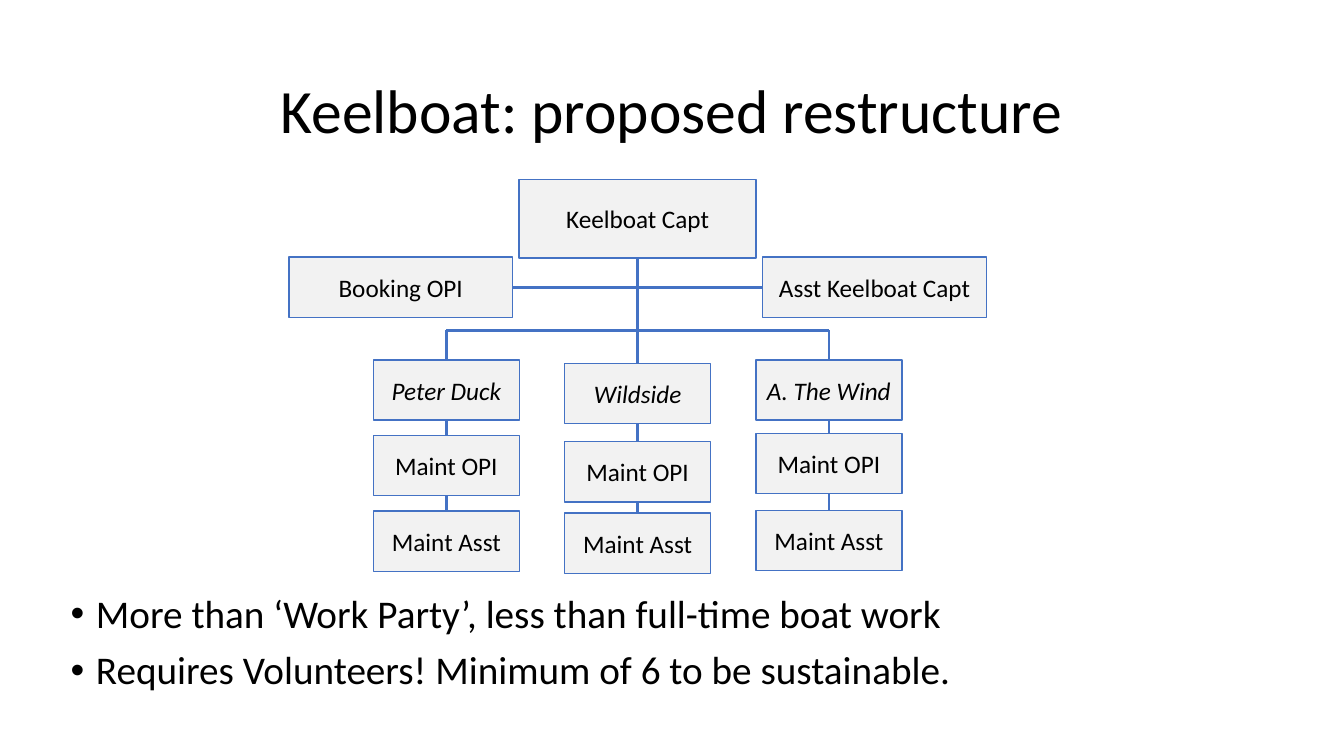
import pptx
import pptx.util
import pptx.dml.color
import pptx.enum.shapes
import pptx.enum.text
from lxml import etree
from pptx.util import Cm, Pt

TITLE = "Keelboat: proposed restructure"
CAPTAIN = "Keelboat Capt"
DEPUTIES = ("Booking OPI", "Asst Keelboat Capt")
# Each boat: name, then the top of its three boxes in cm
BOATS = [
    ("Peter Duck", (9.07, 10.97, 12.88)),
    ("Wildside", (9.16, 11.13, 12.93)),
    ("A. The Wind", (9.07, 10.92, 12.86)),
]
CREW = ("Maint OPI", "Maint Asst")
POINTS = [
    "More than ‘Work Party’, less than full-time boat work",
    "Requires Volunteers! Minimum of 6 to be sustainable.",
]

THEME = {
    "font": "Calibri",
    "text": pptx.dml.color.RGBColor.from_string("000000"),
    "box": pptx.dml.color.RGBColor.from_string("F2F2F2"),
    "line": pptx.dml.color.RGBColor.from_string("4472C4"),
    "title_size": Pt(44),
    "box_size": Pt(18),
    "point_size": Pt(28),
    "box_line": Pt(1),
    "link_line": Pt(2),
}

AXIS = 16.07                # centre of the chart, cm
BOAT_STEP = 4.82            # between boat centres
DEPUTY_OFFSET = 5.97        # from the axis to a deputy box's centre
DEPUTY_TOP = 6.48
BUS_TOP = 8.32
CAPTAIN_SIZE = (5.97, 1.98)
DEPUTY_SIZE = (5.64, 1.52)
BOAT_SIZE = (3.68, 1.52)
TOP, LEFT, BOTTOM, RIGHT = range(4)

CENTER = pptx.enum.text.PP_ALIGN.CENTER
MIDDLE = pptx.enum.text.MSO_ANCHOR.MIDDLE


def style(paragraph, size, italic=False):
    for run in paragraph.runs:
        run.font.name = THEME["font"]
        run.font.size = size
        run.font.italic = italic
        run.font.color.rgb = THEME["text"]


def add_box(slide, label, center, top, size, italic=False):
    width, height = size
    box = slide.shapes.add_shape(
        pptx.enum.shapes.MSO_SHAPE.RECTANGLE,
        Cm(center - width / 2), Cm(top), Cm(width), Cm(height))
    box.shadow.inherit = False
    box.fill.solid()
    box.fill.fore_color.rgb = THEME["box"]
    box.line.color.rgb = THEME["line"]
    box.line.width = THEME["box_line"]
    box.text_frame.text = label
    box.text_frame.word_wrap = True
    box.text_frame.vertical_anchor = MIDDLE
    paragraph = box.text_frame.paragraphs[0]
    paragraph.alignment = CENTER
    style(paragraph, THEME["box_size"], italic)
    return box


def add_link(slide, start, end=(0, 0), begin_at=None, end_at=None):
    """Draw a line between points in cm; a (box, side) joint replaces a point."""
    link = slide.shapes.add_connector(
        pptx.enum.shapes.MSO_CONNECTOR.STRAIGHT,
        *(Cm(value) for value in (*start, *end)))
    if begin_at:
        link.begin_connect(*begin_at)
    if end_at:
        link.end_connect(*end_at)
    link.line.color.rgb = THEME["line"]
    link.line.width = THEME["link_line"]
    etree.SubElement(link._element.spPr, pptx.oxml.ns.qn("a:effectLst"))


def add_title(slide):
    title = slide.shapes.add_textbox(Cm(2.33), Cm(1.01), Cm(29.21), Cm(3.68))
    title.text_frame.word_wrap = True
    title.text_frame.vertical_anchor = MIDDLE
    title.text_frame.text = TITLE
    paragraph = title.text_frame.paragraphs[0]
    paragraph.alignment = CENTER
    paragraph.line_spacing = 0.9
    style(paragraph, THEME["title_size"])


def add_chart_of_roles(slide):
    captain = add_box(slide, CAPTAIN, AXIS, 4.52, CAPTAIN_SIZE)
    deputy_middle = DEPUTY_TOP + DEPUTY_SIZE[1] / 2
    for side, label, joint in zip((-1, 1), DEPUTIES, (RIGHT, LEFT)):
        deputy = add_box(slide, label, AXIS + side * DEPUTY_OFFSET,
                         DEPUTY_TOP, DEPUTY_SIZE)
        add_link(slide, (AXIS, deputy_middle), end_at=(deputy, joint))
        add_link(slide, (AXIS, BUS_TOP), (AXIS + side * BOAT_STEP, BUS_TOP))

    for column, (boat, tops) in enumerate(BOATS, start=-1):
        center = AXIS + column * BOAT_STEP
        *upper, lowest = zip((boat, *CREW), tops)
        foot = add_box(slide, lowest[0], center, lowest[1], BOAT_SIZE)
        trunk = (captain, BOTTOM) if column == 0 else None
        add_link(slide, (center, BUS_TOP), begin_at=trunk, end_at=(foot, TOP))
        # The upper boxes lie over the line that runs down to the lowest one
        for label, top in upper:
            add_box(slide, label, center, top, BOAT_SIZE, label == boat)


def add_points(slide):
    points = slide.shapes.add_textbox(Cm(1.53), Cm(14.86), Cm(29.21), Cm(3.94))
    frame = points.text_frame
    frame.word_wrap = True
    frame.text = "\n".join(POINTS)
    for index, paragraph in enumerate(frame.paragraphs):
        properties = paragraph._p.get_or_add_pPr()
        properties.set("marL", str(Cm(0.64)))
        properties.set("indent", str(-Cm(0.64)))
        font = etree.SubElement(properties, pptx.oxml.ns.qn("a:buFont"))
        font.set("typeface", "Arial")
        bullet = etree.SubElement(properties, pptx.oxml.ns.qn("a:buChar"))
        bullet.set("char", "•")
        paragraph.line_spacing = 0.9
        paragraph.space_before = Pt(10 if index else 0)
        style(paragraph, THEME["point_size"])


def main():
    deck = pptx.Presentation()
    deck.slide_width, deck.slide_height = Cm(33.87), Cm(19.05)
    slide = deck.slides.add_slide(deck.slide_layouts[6])
    add_title(slide)
    add_chart_of_roles(slide)
    add_points(slide)
    deck.save("out.pptx")


if __name__ == "__main__":
    main()
